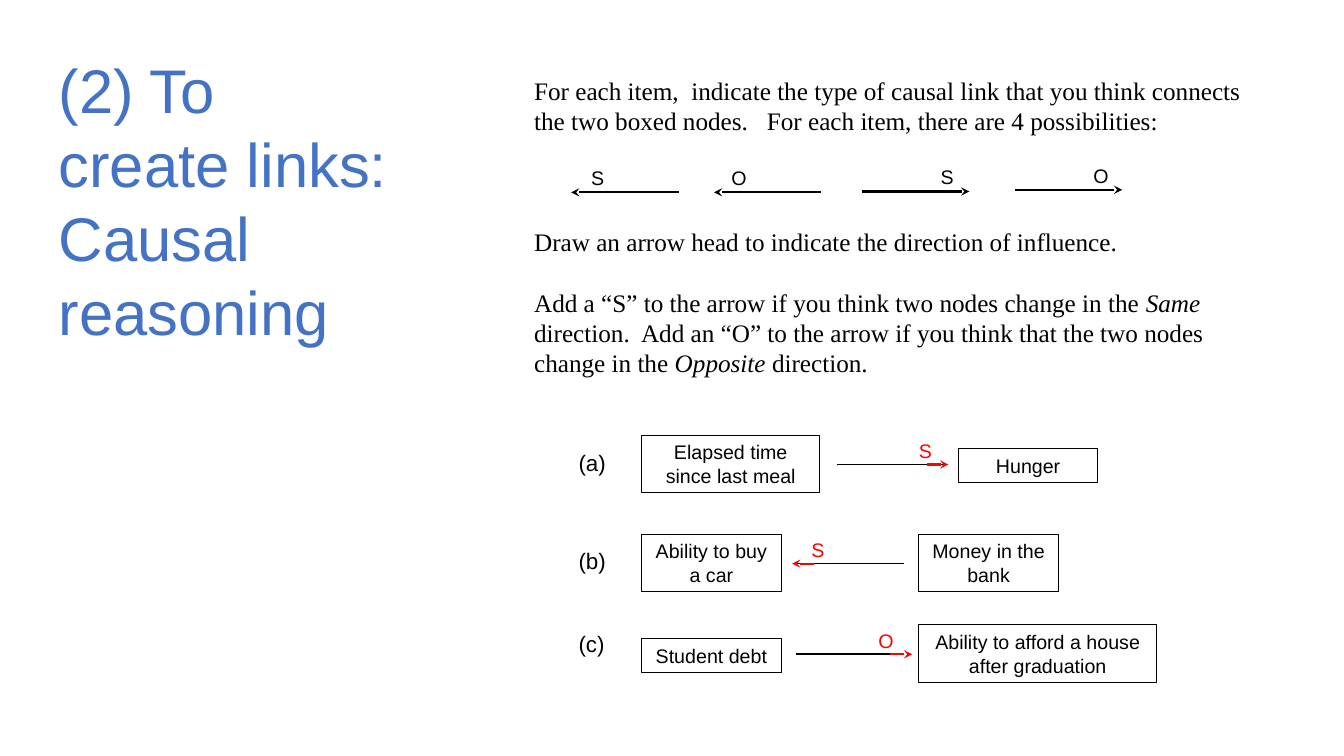
from lxml import etree
from pptx import Presentation
from pptx import util as u
from pptx.dml.color import RGBColor
from pptx.enum import shapes, text
from pptx.oxml.ns import qn

COLORS = {"ink": "000000", "answer": "FF0000", "title": "4472C4", "paper": "FFFFFF"}
COLUMNS, ROWS = 160, 90
SANS, SERIF = "Arial", "Times New Roman"
ARROW_LENGTH, ANSWER_LENGTH = 12.8, 2.6


def write(frame, paragraphs, size=14, font=SANS, color="ink", align="LEFT", wrap=True, gap=0):
    frame.word_wrap = wrap
    frame.auto_size = text.MSO_AUTO_SIZE.SHAPE_TO_FIT_TEXT
    for index, pieces in enumerate(paragraphs):
        paragraph = frame.paragraphs[0] if index == 0 else frame.add_paragraph()
        paragraph.alignment = getattr(text.PP_ALIGN, align)
        if index:
            paragraph.space_before = u.Pt(gap)
        for order, piece in enumerate(pieces):
            run = paragraph.add_run()
            run.text = piece
            run.font.size = u.Pt(size)
            run.font.name = font
            run.font.italic = order % 2 == 1
            run.font.color.rgb = RGBColor.from_string(COLORS[color])


class CausalSlide:
    def __init__(self, deck):
        self.slide = deck.slides.add_slide(deck.slide_layouts[6])
        self.cell_width = deck.slide_width / COLUMNS
        self.cell_height = deck.slide_height / ROWS

    def place(self, *lengths):
        cells = (self.cell_width, self.cell_height) * 2
        return [round(length * cell) for length, cell in zip(lengths, cells)]

    def label(self, area, *paragraphs, **style):
        box = self.slide.shapes.add_textbox(*self.place(*area))
        write(box.text_frame, paragraphs, **style)

    def node(self, area, caption):
        box = self.slide.shapes.add_shape(shapes.MSO_SHAPE.RECTANGLE, *self.place(*area))
        box.shadow.inherit = False
        box.fill.background()
        box.line.color.rgb = RGBColor.from_string(COLORS["ink"])
        box.line.width = u.Pt(0.75)
        box.text_frame.vertical_anchor = text.MSO_ANCHOR.MIDDLE
        write(box.text_frame, [[caption]], align="CENTER")

    def link(self, start, end, row, color="ink", weight=1.5, head=True):
        line = self.slide.shapes.add_connector(
            shapes.MSO_CONNECTOR.STRAIGHT, *self.place(start, row, end, row))
        line.line.color.rgb = RGBColor.from_string(COLORS[color])
        line.line.width = u.Pt(weight)
        if head:
            etree.SubElement(line.line._get_or_add_ln(), qn("a:headEnd"), type="stealth")
        etree.SubElement(line._element.spPr, qn("a:effectLst"))


def main():
    deck = Presentation()
    deck.slide_width, deck.slide_height = u.Inches(13.333), u.Inches(7.5)
    page = CausalSlide(deck)
    page.slide.background.fill.solid()
    page.slide.background.fill.fore_color.rgb = RGBColor.from_string(COLORS["paper"])

    page.label((5.8, 5.6, 42.5, 36.7), ["(2) To create links: Causal reasoning"],
               size=44, color="title")
    page.label((62.4, 8.4, 89.8, 8.5),
               ["For each item,  indicate the type of causal link that you think connects "
                "the two boxed nodes.   For each item, there are 4 possibilities:"],
               size=18, font=SERIF)
    page.label((62.4, 26.4, 82.6, 19.4),
               ["Draw an arrow head to indicate the direction of influence."],
               ["Add a “S” to the arrow if you think two nodes change in the ", "Same",
                " direction.  Add an “O” to the arrow if you think that the two nodes "
                "change in the ", "Opposite", " direction."],
               size=18, font=SERIF, gap=21.6)

    for sign, tip, direction, row, sign_column in (
            ("S", 68, 1, 22.9, 69.2), ("O", 85, 1, 22.9, 85.9),
            ("S", 115.4, -1, 22.8, 110.8), ("O", 133.6, -1, 22.6, 129)):
        page.link(tip, tip + direction * ARROW_LENGTH, row)
        page.label((sign_column, row - 3.7, 5, 4.1), [sign])

    items = (
        ("(a)", 52.9, (76.4, 51.8, 21.2, 6.8), "Elapsed time since last meal",
         (114.1, 53.4, 16.6, 4.1), "Hunger", 99.6, 55.3, 1, "S", 112.9, -1, 108.2),
        ("(b)", 64.6, (76.4, 63.6, 16.6, 6.8), "Ability to buy a car",
         (109.4, 63.6, 16.6, 6.8), "Money in the bank", 94.8, 67.1, 1, "S", 94.3, 1, 95.4),
        ("(c)", 74.4, (76.4, 76, 16.6, 4.1), "Student debt",
         (109.4, 74.4, 28.3, 6.8), "Ability to afford a house after graduation",
         94.8, 77.9, 1.5, "O", 108.6, -1, 103.4))
    for (letter, letter_row, first_area, first, second_area, second,
         start, row, weight, sign, tip, direction, sign_column) in items:
        page.label((67.7, letter_row, 6.5, 4.4), [letter], size=16, wrap=False)
        page.node(first_area, first)
        page.node(second_area, second)
        page.link(start, start + ARROW_LENGTH, row, weight=weight, head=False)
        page.link(tip, tip + direction * ANSWER_LENGTH, row, color="answer")
        page.label((sign_column, row - 3.6, 4.2, 4.1), [sign], color="answer")

    deck.save("out.pptx")


if __name__ == "__main__":
    main()
